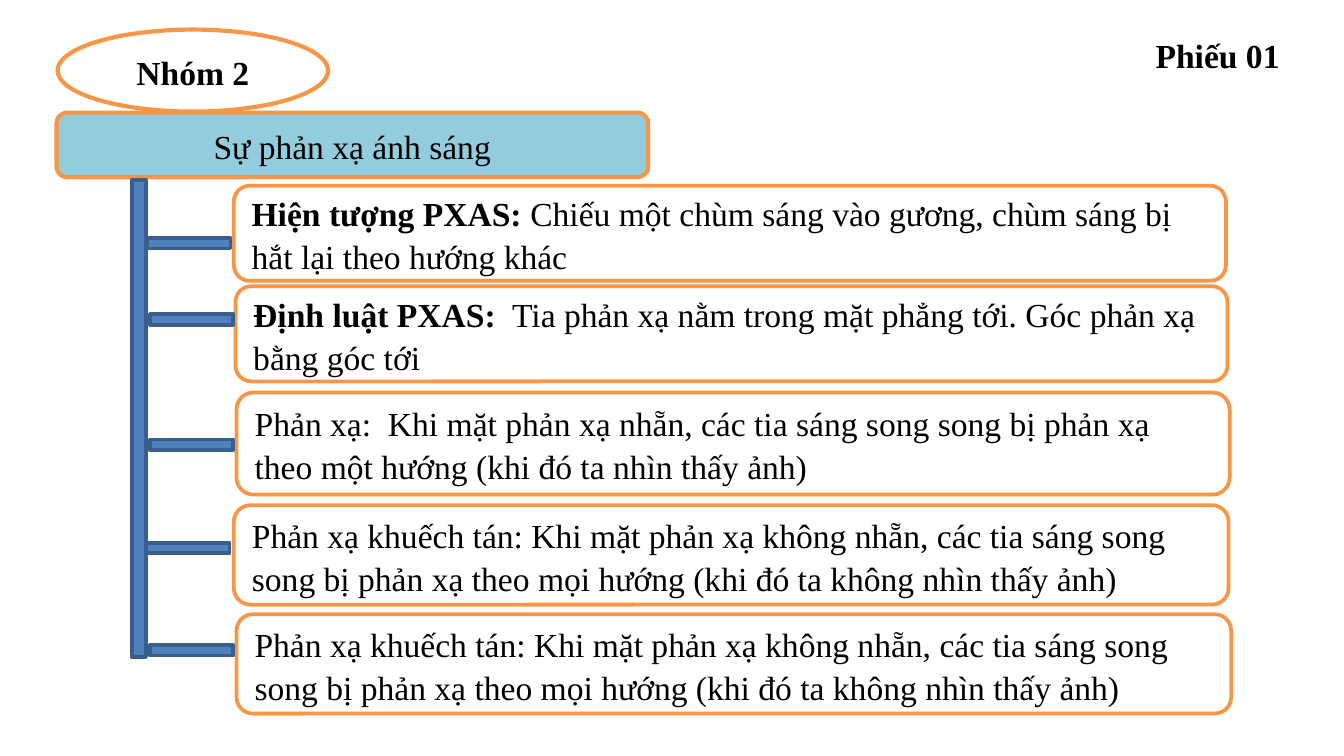
import pptx
import pptx.util
import pptx.dml.color
import pptx.enum.shapes
import pptx.enum.text

Cm = pptx.util.Cm
Pt = pptx.util.Pt
kinds = pptx.enum.shapes.MSO_SHAPE
sides = pptx.enum.text.PP_ALIGN

deck = pptx.Presentation()
deck.slide_width = Cm(25.4)
deck.slide_height = Cm(14.29)
slide = deck.slides.add_slide(deck.slide_layouts[6])


def tint(fill, color):
    fill.solid()
    fill.fore_color.rgb = pptx.dml.color.RGBColor.from_string(color)


def draw(kind, at, color, edge, width, runs=(), side=sides.LEFT):
    shape = slide.shapes.add_shape(kind, *[Cm(n) for n in at])
    shape.shadow.inherit = False
    tint(shape.fill, color)
    tint(shape.line.fill, edge)
    shape.line.width = Pt(width)
    frame = shape.text_frame
    frame.word_wrap = True
    frame.vertical_anchor = pptx.enum.text.MSO_ANCHOR.MIDDLE
    para = frame.paragraphs[0]
    para.alignment = side
    para.line_spacing = 1.07
    para.space_after = Pt(8)
    for text, bold in runs:
        run = para.add_run()
        run.text = text
        run.font.name = "Times New Roman"
        run.font.size = Pt(18)
        run.font.bold = bold
        tint(run.font.fill, "000000")


draw(kinds.ROUNDED_RECTANGLE, (1.07, 2.13, 11.18, 1.22), "93CDDD", "F79646", 2.25,
     [("Sự phản xạ ánh sáng", False)], sides.CENTER)
draw(kinds.RECTANGLE, (2.49, 3.4, 0.27, 9.02), "4F81BD", "3A5F8C", 2)

blur = [("Phản xạ khuếch tán: Khi mặt phản xạ không nhẵn, các tia sáng song song "
         "bị phản xạ theo mọi hướng (khi đó ta không nhìn thấy ảnh)", False)]
rows = [
    ((4.42, 3.51, 18.75, 1.8), (2.79, 4.5),
     [("Hiện tượng PXAS: ", True),
      ("Chiếu một chùm sáng vào gương, chùm sáng bị hắt lại theo hướng khác", False)]),
    ((4.45, 5.41, 18.75, 1.8), (2.84, 5.94),
     [("Định luật PXAS: ", True),
      (" Tia phản xạ nằm trong mặt phẳng tới. Góc phản xạ bằng góc tới", False)]),
    ((4.47, 7.42, 18.77, 1.93), (2.84, 8.31),
     [("Phản xạ:  Khi mặt phản xạ nhẵn, các tia sáng song song bị phản xạ "
       "theo một hướng (khi đó ta nhìn thấy ảnh)", False)]),
    ((4.42, 9.55, 18.8, 1.88), (2.77, 10.26), blur),
    ((4.47, 11.61, 18.8, 1.88), (2.84, 12.19), blur),
]
for box, twig, runs in rows:
    draw(kinds.ROUNDED_RECTANGLE, box, "FFFFFF", "F79646", 2, runs)
    draw(kinds.RECTANGLE, (*twig, 1.57, 0.2), "4F81BD", "3A5F8C", 2)

draw(kinds.OVAL, (1.09, 0.56, 5.11, 1.55), "FFFFFF", "F79646", 2.25,
     [("Nhóm 2", True)], sides.CENTER)

label = slide.shapes.add_textbox(Cm(21.59), Cm(0.53), Cm(3.18), Cm(1.02))
label.text_frame.word_wrap = True
run = label.text_frame.paragraphs[0].add_run()
run.text = "Phiếu 01"
run.font.name = "Times New Roman"
run.font.size = Pt(18)
run.font.bold = True
tint(run.font.fill, "000000")

deck.save("out.pptx")
